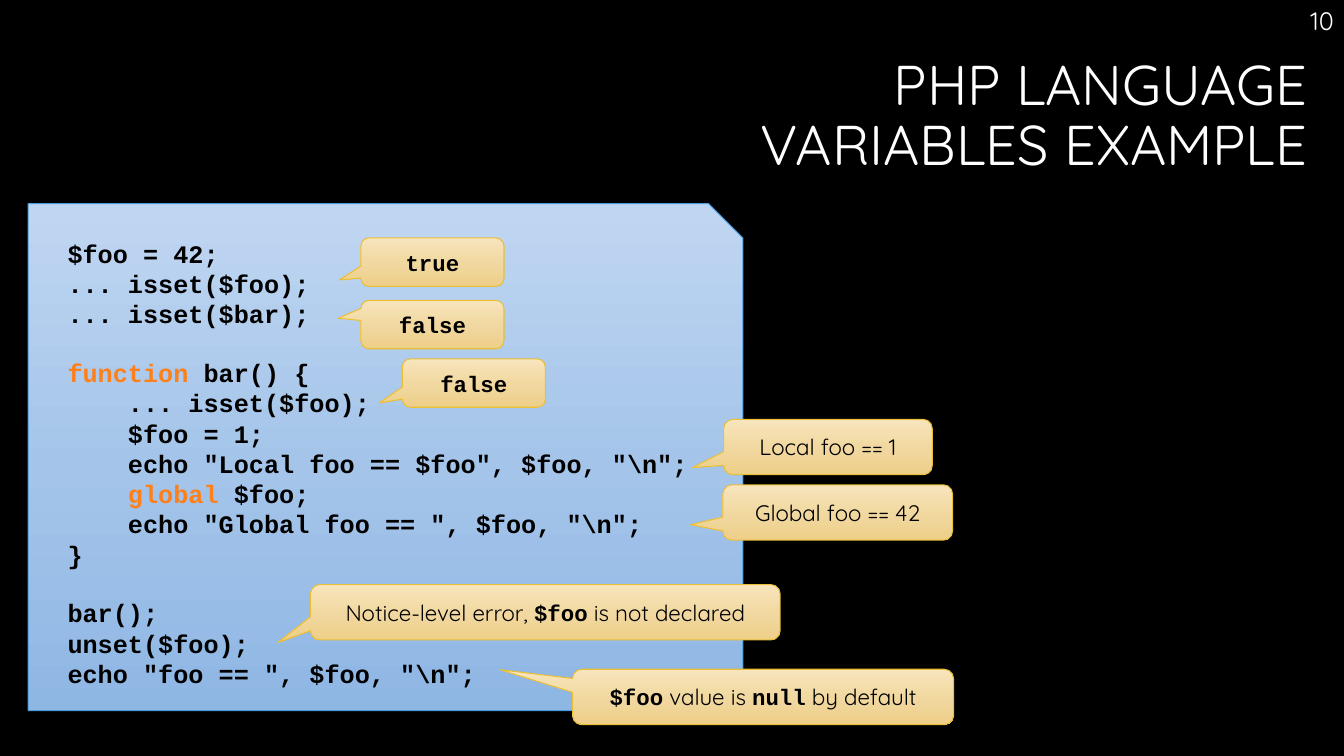
import copy
from dataclasses import dataclass

import pptx
import pptx.util
import pptx.dml.color
import pptx.enum.shapes
import pptx.enum.text

SHAPES = pptx.enum.shapes.MSO_SHAPE
ALIGN = pptx.enum.text.PP_ALIGN
ANCHOR = pptx.enum.text.MSO_ANCHOR
Pt = pptx.util.Pt

TITLE = "PHP LANGUAGE\nVARIABLES EXAMPLE"
PAGE = "10"

# Blocks of code lines: (indent level, text); backticks mark PHP keywords.
CODE = [
    [(0, "$foo = 42;"),
     (0, "... isset($foo);"),
     (0, "... isset($bar);")],
    [(0, "`function` bar() {"),
     (1, "... isset($foo);"),
     (1, "$foo = 1;"),
     (1, 'echo "Local foo == $foo", $foo, "\\n";'),
     (1, "`global` $foo;"),
     (1, 'echo "Global foo == ", $foo, "\\n";'),
     (0, "}")],
    [(0, "bar();"),
     (0, "unset($foo);"),
     (0, 'echo "foo == ", $foo, "\\n";')],
]

# Boxes are left, top, width, height in percent of the slide.
TITLE_BOX = (1.95, 6.13, 96.08, 18.8)
PAGE_BOX = (78.38, 0, 21.6, 5.33)
CODE_BOX = (2.1, 26.93, 53.18, 67.07)
SHORT, TALL = 6.4, 7.33

# Text (backticks mark code), box, pointer tip relative to the box centre.
CALLOUTS = [
    ("`true`", (26.85, 31.47, 10.65, SHORT), (-0.65, 0.37)),
    ("Local foo == 1", (53.85, 55.47, 15.52, TALL), (-0.65, 0.37)),
    ("`false`", (26.85, 39.73, 10.65, SHORT), (-0.66, -0.13)),
    ("`false`", (29.93, 47.47, 10.65, SHORT), (-0.66, 0.41)),
    ("Global foo == 42", (53.78, 64.13, 17.1, TALL), (-0.64, 0.22)),
    ("Notice-level error, `$foo` is not declared",
     (23.1, 77.33, 34.95, TALL), (-0.57, 0.55)),
    ("`$foo` value is `null` by default",
     (42.6, 88.53, 28.35, TALL), (-0.69, -0.49)),
]


@dataclass(frozen=True)
class Theme:
    background: str = "000000"
    light: str = "FFFFFF"
    dark: str = "000000"
    keyword: str = "FE801A"
    panel: tuple = ("BFD6F2", "A4C4E9", "8FB7E4")
    panel_line: str = "4A9BDC"
    callout: tuple = ("F8E5BD", "F1D8A0", "EECF89")
    callout_line: str = "E9BF35"
    stops: tuple = (0, 0.52, 1)
    body_font: str = "Quicksand"
    code_font: str = "Courier New"
    title_size: int = 40
    code_size: int = 18
    note_size: int = 16
    line_width: float = 0.75


THEME = Theme()
CODE_LINE = Pt(THEME.code_size * 1.133)
CODE_INDENT = Pt(THEME.code_size * 0.6 * 4)

deck = pptx.Presentation()
deck.slide_width = pptx.util.Inches(13.333)
deck.slide_height = pptx.util.Inches(7.5)
slide = deck.slides.add_slide(deck.slide_layouts[6])


def rgb(value):
    return pptx.dml.color.RGBColor.from_string(value)


def place(box):
    """Turn percentages of the slide into lengths."""
    sides = (deck.slide_width, deck.slide_height) * 2
    return [round(side * share / 100) for side, share in zip(sides, box)]


def style(run, size, color, font, bold=False):
    run.font.size = Pt(size)
    run.font.color.rgb = rgb(color)
    run.font.name = font
    run.font.bold = bold


def marked_runs(paragraph, text):
    """Add runs split at backticks; yield each with whether it is marked."""
    for index, part in enumerate(text.split("`")):
        if part:
            run = paragraph.add_run()
            run.text = part
            yield run, index % 2 == 1


def add_label(text, box, size, anchor):
    frame = slide.shapes.add_textbox(*place(box)).text_frame
    frame.word_wrap = True
    frame.vertical_anchor = anchor
    paragraph = frame.paragraphs[0]
    paragraph.text = text
    paragraph.alignment = ALIGN.RIGHT
    for run in paragraph.runs:
        style(run, size, THEME.light, THEME.body_font)
    return paragraph


def add_panel(kind, box, adjustments, colors, line):
    """Add a preset shape with a three-stop gradient from top to bottom."""
    panel = slide.shapes.add_shape(kind, *place(box))
    panel.shadow.inherit = False
    for index, value in enumerate(adjustments):
        panel.adjustments[index] = value
    panel.fill.gradient()
    panel.fill.gradient_angle = 270
    first = panel._element.spPr.find(".//" + pptx.oxml.ns.qn("a:gs"))
    first.addnext(copy.deepcopy(first))
    for stop, color, position in zip(panel.fill.gradient_stops, colors, THEME.stops):
        stop.color.rgb = rgb(color)
        stop.position = position
    panel.line.color.rgb = rgb(line)
    panel.line.width = Pt(THEME.line_width)
    panel.text_frame.word_wrap = True
    panel.text_frame.vertical_anchor = ANCHOR.MIDDLE
    return panel.text_frame


def add_code():
    frame = add_panel(SHAPES.SNIP_1_RECTANGLE, CODE_BOX, [0.068],
                      THEME.panel, THEME.panel_line)
    frame.margin_left = pptx.util.Inches(0.39)
    frame.margin_top = 0
    paragraph = frame.paragraphs[0]
    for block_index, block in enumerate(CODE):
        for line_index, (level, text) in enumerate(block):
            if block_index or line_index:
                paragraph = frame.add_paragraph()
            paragraph.alignment = ALIGN.LEFT
            if block_index and not line_index:
                paragraph.space_before = CODE_LINE
            if level:
                paragraph._p.get_or_add_pPr().set("marL", str(level * CODE_INDENT))
            for run, is_keyword in marked_runs(paragraph, text):
                color = THEME.keyword if is_keyword else THEME.dark
                style(run, THEME.code_size, color, THEME.code_font, True)


def add_callout(text, box, tip):
    frame = add_panel(SHAPES.ROUNDED_RECTANGULAR_CALLOUT, box, [*tip, 0.167],
                      THEME.callout, THEME.callout_line)
    paragraph = frame.paragraphs[0]
    paragraph.alignment = ALIGN.CENTER
    for run, is_code in marked_runs(paragraph, text):
        font = THEME.code_font if is_code else THEME.body_font
        style(run, THEME.note_size, THEME.dark, font, is_code)


def main():
    slide.background.fill.solid()
    slide.background.fill.fore_color.rgb = rgb(THEME.background)
    heading = add_label(TITLE, TITLE_BOX, THEME.title_size, ANCHOR.MIDDLE)
    heading.line_spacing = 0.9
    add_label(PAGE, PAGE_BOX, THEME.code_size, ANCHOR.TOP)
    add_code()
    for callout in CALLOUTS:
        add_callout(*callout)
    deck.save("out.pptx")


if __name__ == "__main__":
    main()
